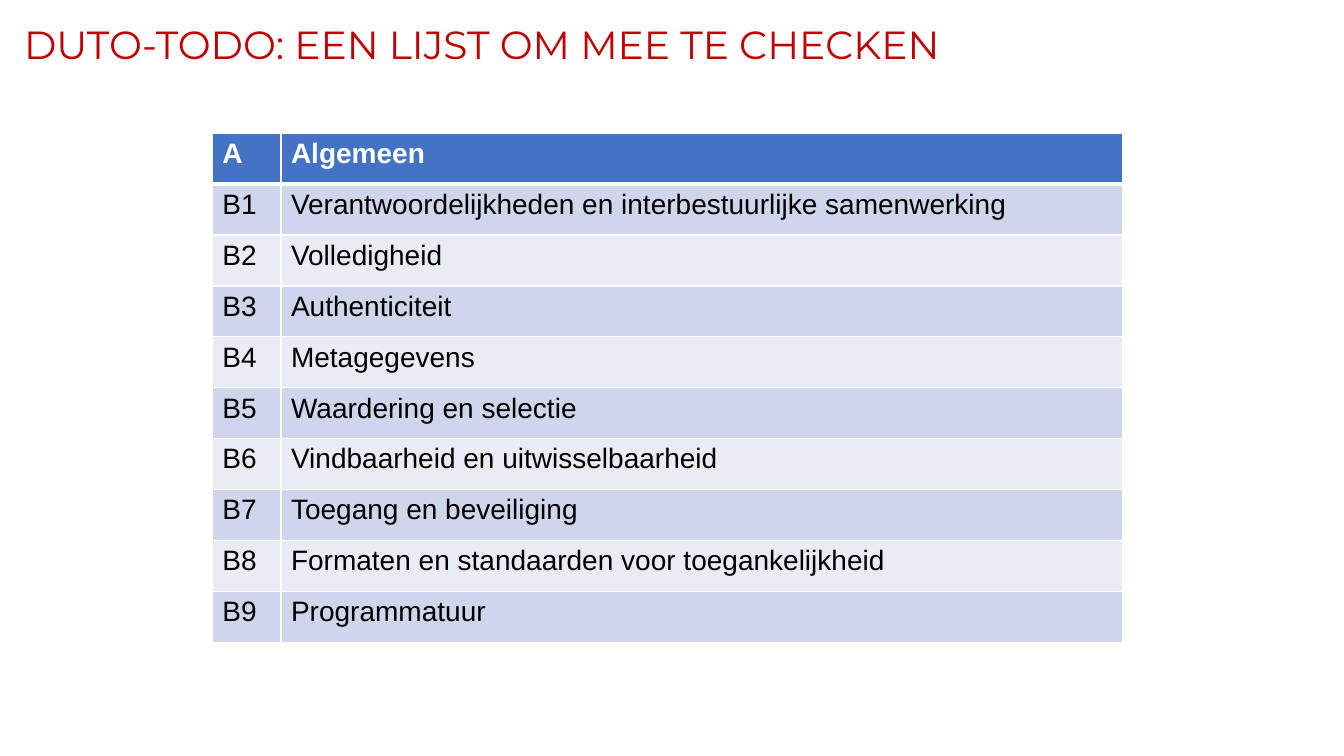
from lxml import etree
from pptx import Presentation
from pptx.dml.color import RGBColor
from pptx.enum import text
from pptx.oxml import ns
from pptx.util import Cm, Pt

TOPICS = [
    "Verantwoordelijkheden en interbestuurlijke samenwerking",
    "Volledigheid",
    "Authenticiteit",
    "Metagegevens",
    "Waardering en selectie",
    "Vindbaarheid en uitwisselbaarheid",
    "Toegang en beveiliging",
    "Formaten en standaarden voor toegankelijkheid",
    "Programmatuur",
]
CHECKLIST = [("A", "Algemeen")] + [(f"B{i}", topic) for i, topic in enumerate(TOPICS, 1)]


def colour(hex_code):
    return RGBColor.from_string(hex_code)


def style(paragraph, font_name, size, hex_code, bold=False):
    font = paragraph.font
    font.name, font.size, font.bold = font_name, Pt(size), bold
    font.color.rgb = colour(hex_code)


def add_heading(slide, left, top, width, height):
    heading = slide.shapes.add_textbox(left, top, width, height).text_frame
    heading.word_wrap = True
    heading.vertical_anchor = text.MSO_ANCHOR.BOTTOM
    line = heading.paragraphs[0]
    line.text = "DUTO-TODO: EEN LIJST OM MEE TE CHECKEN"
    line.line_spacing = 0.9
    style(line, "Montserrat", 28, "C00000")


def add_borders(cell, widths, hex_code):
    """Draw the cell's edges; widths maps L, R, T and B to points."""
    properties = cell._tc.get_or_add_tcPr()
    for side, points in widths.items():
        edge = etree.SubElement(properties, ns.qn(f"a:ln{side}"), w=str(Pt(points)))
        fill = etree.SubElement(edge, ns.qn("a:solidFill"))
        etree.SubElement(fill, ns.qn("a:srgbClr"), val=hex_code)


def add_checklist(slide, left, top, width, height):
    checklist = slide.shapes.add_table(len(CHECKLIST), 2, left, top, width, height).table
    code_width = Cm(1.73)
    checklist.columns[0].width = code_width
    checklist.columns[1].width = width - code_width

    for r, entry in enumerate(CHECKLIST):
        header = r == 0
        band = "4472C4" if header else ("E9EBF5", "CFD5EA")[r % 2]
        # The heavy rule below the header belongs to both adjoining rows
        edges = {"L": 1, "R": 1, "T": 3 if r == 1 else 1, "B": 3 if header else 1}
        for c, words in enumerate(entry):
            cell = checklist.cell(r, c)
            add_borders(cell, edges, "FFFFFF")
            cell.fill.solid()
            cell.fill.fore_color.rgb = colour(band)
            cell.text = words
            style(cell.text_frame.paragraphs[0], "Arial", 20,
                  "FFFFFF" if header else "000000", bold=header)


def main():
    deck = Presentation()
    deck.slide_width, deck.slide_height = Cm(33.87), Cm(19.05)
    slide = deck.slides.add_slide(deck.slide_layouts[6])
    add_heading(slide, Cm(0.36), Cm(0.33), Cm(32.89), Cm(1.52))
    add_checklist(slide, Cm(5.35), Cm(3.36), Cm(22.94), Cm(12.82))
    deck.save("out.pptx")


if __name__ == "__main__":
    main()
